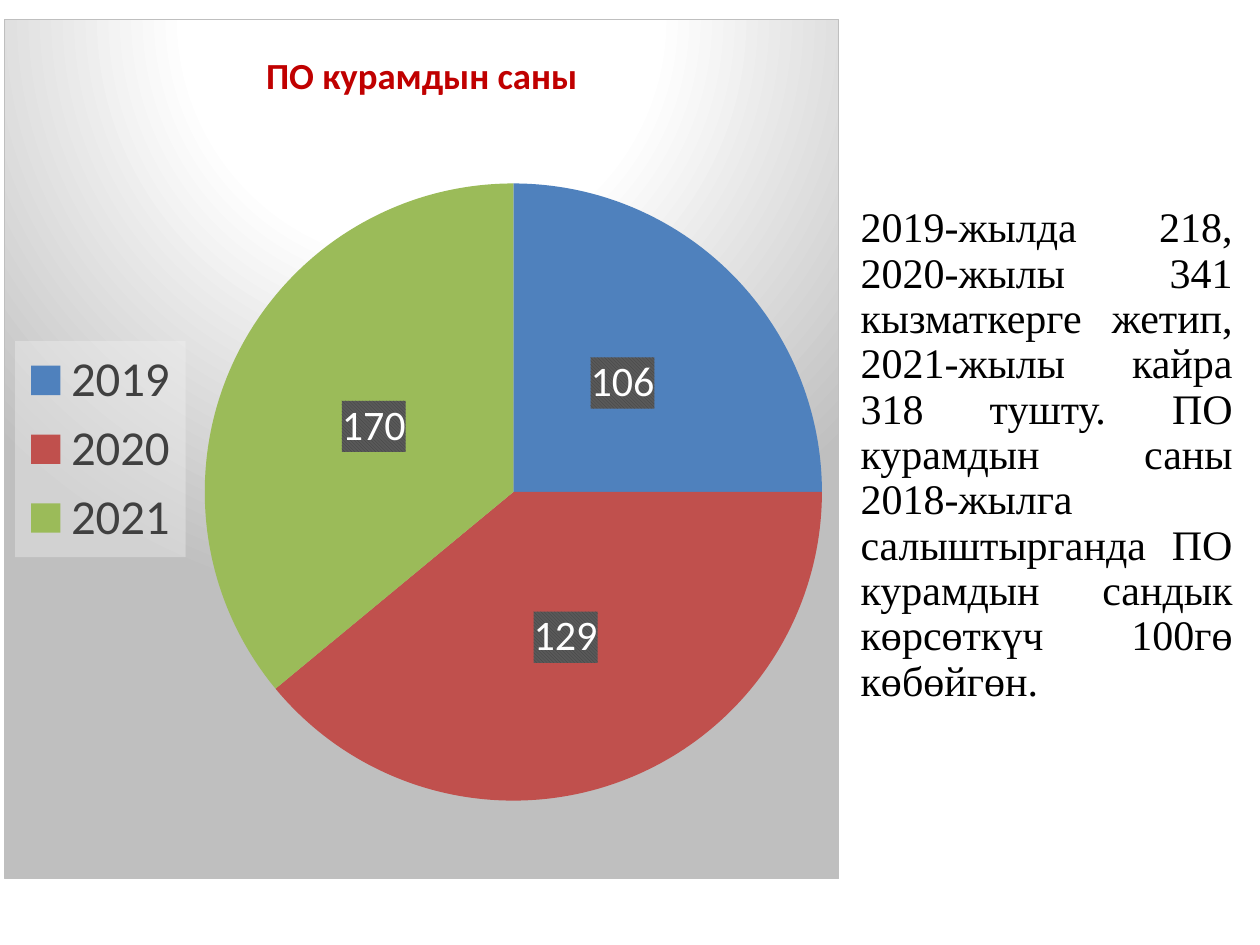
from lxml import etree
from pptx import Presentation
from pptx.chart.data import CategoryChartData
from pptx.dml.color import RGBColor
from pptx.enum.chart import XL_CHART_TYPE, XL_LABEL_POSITION, XL_LEGEND_POSITION
from pptx.enum.text import MSO_AUTO_SIZE, PP_ALIGN
from pptx.oxml import parse_xml
from pptx.oxml.ns import nsdecls, qn
from pptx.util import Cm, Pt

PIE = XL_CHART_TYPE.PIE
CENTER = XL_LABEL_POSITION.CENTER
LEFT = XL_LEGEND_POSITION.LEFT
JUSTIFY = PP_ALIGN.JUSTIFY
GROW = MSO_AUTO_SIZE.SHAPE_TO_FIT_TEXT

BLACK = RGBColor(0x00, 0x00, 0x00)
WHITE = RGBColor(0xFF, 0xFF, 0xFF)
DARK_GRAY = RGBColor(0x40, 0x40, 0x40)
DARK_RED = RGBColor(0xC0, 0x00, 0x00)
BLUE = RGBColor(0x4F, 0x81, 0xBD)
RED = RGBColor(0xC0, 0x50, 0x4D)
GREEN = RGBColor(0x9B, 0xBB, 0x59)

CHART_FILL = """<a:gradFill>
  <a:gsLst>
    <a:gs pos="0"><a:srgbClr val="FFFFFF"/></a:gs>
    <a:gs pos="39000"><a:srgbClr val="FFFFFF"/></a:gs>
    <a:gs pos="100000"><a:srgbClr val="BFBFBF"/></a:gs>
  </a:gsLst>
  <a:path path="circle"><a:fillToRect l="50000" t="-80000" r="50000" b="180000"/></a:path>
</a:gradFill>
<a:ln w="9525"><a:solidFill><a:srgbClr val="BFBFBF"/></a:solidFill></a:ln>"""
LEGEND_FILL = """<a:solidFill>
  <a:srgbClr val="F2F2F2"><a:alpha val="39000"/></a:srgbClr>
</a:solidFill>"""
LABEL_FILL = """<a:pattFill prst="dkDnDiag">
  <a:fgClr><a:srgbClr val="404040"/></a:fgClr>
  <a:bgClr><a:srgbClr val="595959"/></a:bgClr>
</a:pattFill>"""


def write(tf, text, *, size, color, font="Calibri", bold=False, align=None, spacing=None):
    p = tf.paragraphs[0]
    p.alignment = align
    p.line_spacing = spacing
    r = p.add_run()
    r.text = text
    r.font.size = Pt(size)
    r.font.name = font
    r.font.bold = bold
    r.font.color.rgb = color


def fill_after(element, fill):
    """Give a chart part its shape properties, placed right after element."""
    element.addnext(parse_xml(f'<c:spPr {nsdecls("c", "a")}>{fill}</c:spPr>'))


prs = Presentation()
prs.slide_width, prs.slide_height = Cm(25.4), Cm(19.05)
s = prs.slides.add_slide(prs.slide_layouts[6])

# Pie of staff numbers
data = CategoryChartData()
data.categories = ["2019", "2020", "2021"]
data.add_series("Series 1", (25, 39, 36))
chart = s.shapes.add_chart(PIE, Cm(0.08), Cm(0.38), Cm(16.84), Cm(17.35), data).chart
chart.font.name = "Calibri"
chart.font.size = Pt(10)
chart.font.color.rgb = BLACK
chart_xml = chart.element.find(qn("c:chart"))
fill_after(chart_xml, CHART_FILL)

chart.has_title = True
chart.chart_title.include_in_layout = False
write(chart.chart_title.text_frame, "ПО курамдын саны", size=21, color=DARK_RED, bold=True)

chart.has_legend = True
legend = chart.legend
legend.position = LEFT
legend.include_in_layout = False
legend.font.size = Pt(28)
legend.font.name = "Calibri"
legend.font.color.rgb = DARK_GRAY
fill_after(chart_xml.find(qn("c:legend")).find(qn("c:overlay")), LEGEND_FILL)

plot = chart.plots[0]
plot.vary_by_categories = True
for i, (text, color) in enumerate([("106", BLUE), ("129", RED), ("170", GREEN)]):
    point = plot.series[0].points[i]
    point.format.fill.solid()
    point.format.fill.fore_color.rgb = color
    label = point.data_label
    write(label.text_frame, text, size=24, color=WHITE)
    label.position = CENTER
for label_xml in chart_xml.iter(qn("c:dLbl")):
    fill_after(label_xml.find(qn("c:tx")), LABEL_FILL)

# Fixed place of the pie inside the chart
plot_area = chart_xml.find(qn("c:plotArea"))
for old in plot_area.findall(qn("c:layout")):
    plot_area.remove(old)
layout = parse_xml(f'<c:layout {nsdecls("c")}><c:manualLayout/></c:layout>')
for tag, value in [("layoutTarget", "inner"), ("xMode", "edge"), ("yMode", "edge"),
                   ("x", "0.24"), ("y", "0.19"), ("w", "0.74"), ("h", "0.72")]:
    etree.SubElement(layout[0], qn(f"c:{tag}")).set("val", value)
plot_area.insert(0, layout)

# Comment beside the pie
tf = s.shapes.add_textbox(Cm(17.1), Cm(4.04), Cm(8), Cm(10.41)).text_frame
tf.word_wrap = True
tf.auto_size = GROW
write(tf, "2019-жылда 218, 2020-жылы 341 кызматкерге жетип, 2021-жылы кайра 318 тушту. "
          "ПО курамдын саны 2018-жылга салыштырганда ПО курамдын сандык көрсөткүч 100гө көбөйгөн.",
      size=24, color=BLACK, font="Times New Roman", align=JUSTIFY, spacing=0.9)

prs.save("out.pptx")
